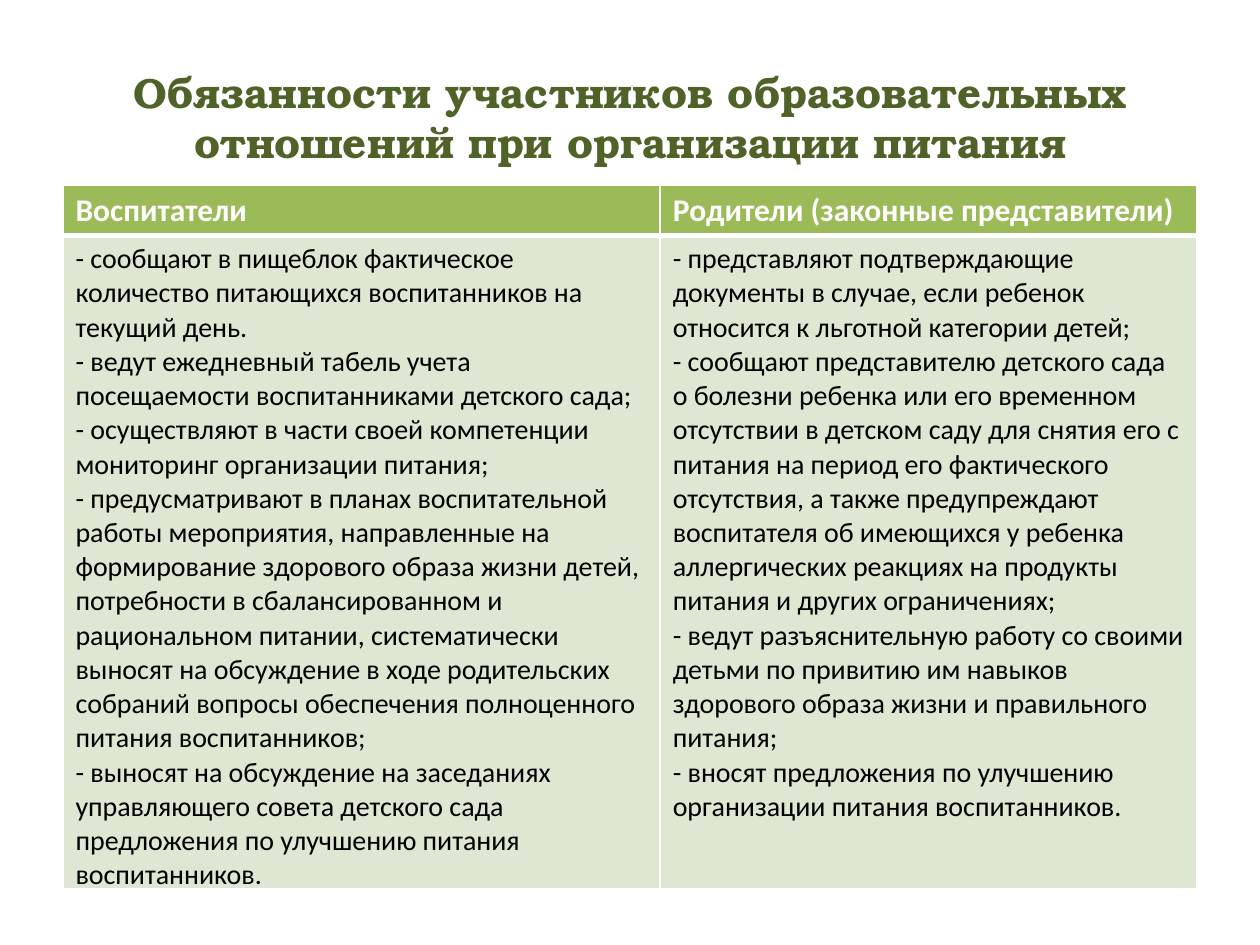
from lxml.etree import SubElement
from pptx import Presentation
from pptx.dml.color import RGBColor
from pptx.enum.text import MSO_ANCHOR, PP_ALIGN
from pptx.oxml.ns import qn
from pptx.util import Inches, Pt

# Content
TITLE = "Обязанности участников образовательных отношений при организации питания"
DUTIES = {
    "Воспитатели": [
        "- сообщают в пищеблок фактическое количество питающихся воспитанников на текущий день.",
        "- ведут ежедневный табель учета посещаемости воспитанниками детского сада;",
        "- осуществляют в части своей компетенции мониторинг организации питания;",
        "- предусматривают в планах воспитательной работы мероприятия, направленные на "
        "формирование здорового образа жизни детей, потребности в сбалансированном и "
        "рациональном питании, систематически выносят на обсуждение в ходе родительских "
        "собраний вопросы обеспечения полноценного питания воспитанников;",
        "- выносят на обсуждение на заседаниях управляющего совета детского сада "
        "предложения по улучшению питания воспитанников.",
    ],
    "Родители (законные представители)": [
        "- представляют подтверждающие документы в случае, если ребенок относится к "
        "льготной категории детей;",
        "- сообщают представителю детского сада о болезни ребенка или его временном "
        "отсутствии в детском саду для снятия его с питания на период его фактического "
        "отсутствия, а также предупреждают воспитателя об имеющихся у ребенка "
        "аллергических реакциях на продукты питания и других ограничениях;",
        "- ведут разъяснительную работу со своими детьми по привитию им навыков здорового "
        "образа жизни и правильного питания;",
        "- вносят предложения по улучшению организации питания воспитанников.",
    ],
}

# Each text style: font, size, colour, bold; each row: fill, bottom border width
THEME = {
    "title": ("TeX Gyre Bonum", 24, "4F6228", True),
    "header": ("Calibri", 18, "FFFFFF", True),
    "body": ("Calibri", 16, "000000", False),
    "fills": {"header": "9BBB59", "body": "DEE7D1"},
    "border": "FFFFFF",
}
COLUMN_WIDTHS = (4.74, 4.26)
ROW_HEIGHTS = (0.39, 5.18)


def write(frame, paragraphs, style, align=PP_ALIGN.LEFT):
    name, size, color, bold = THEME[style]
    for index, text in enumerate(paragraphs):
        para = frame.paragraphs[0] if index == 0 else frame.add_paragraph()
        para.alignment = align
        span = para.add_run()
        span.text = text
        span.font.name = name
        span.font.size = Pt(size)
        span.font.bold = bold
        span.font.color.rgb = RGBColor.from_string(color)


def add_borders(cell, widths):
    properties = cell._tc.get_or_add_tcPr()
    for side, width in zip("LRTB", widths):
        line = SubElement(properties, qn(f"a:ln{side}"), w=str(Pt(width)))
        fill = SubElement(line, qn("a:solidFill"))
        SubElement(fill, qn("a:srgbClr"), val=THEME["border"])


def fill_cell(cell, paragraphs, style):
    # Borders come before the fill in the cell properties
    add_borders(cell, (1, 1, 1, 3) if style == "header" else (1, 1, 3, 1))
    cell.fill.solid()
    cell.fill.fore_color.rgb = RGBColor.from_string(THEME["fills"][style])
    write(cell.text_frame, paragraphs, style)


deck = Presentation()
deck.slide_width, deck.slide_height = Inches(10), Inches(7.5)
page = deck.slides.add_slide(deck.slide_layouts[6])

# Title
box = page.shapes.add_textbox(Inches(0.5), Inches(0.3), Inches(9), Inches(1.25))
box.text_frame.word_wrap = True
box.text_frame.vertical_anchor = MSO_ANCHOR.MIDDLE
write(box.text_frame, [TITLE], "title", PP_ALIGN.CENTER)

# Table of duties
table = page.shapes.add_table(
    len(ROW_HEIGHTS), len(DUTIES), Inches(0.5), Inches(1.47),
    Inches(sum(COLUMN_WIDTHS)), Inches(sum(ROW_HEIGHTS)),
).table
for row, height in zip(table.rows, ROW_HEIGHTS):
    row.height = Inches(height)
for number, (heading, duties) in enumerate(DUTIES.items()):
    table.columns[number].width = Inches(COLUMN_WIDTHS[number])
    fill_cell(table.cell(0, number), [heading], "header")
    fill_cell(table.cell(1, number), duties, "body")

deck.save("out.pptx")
